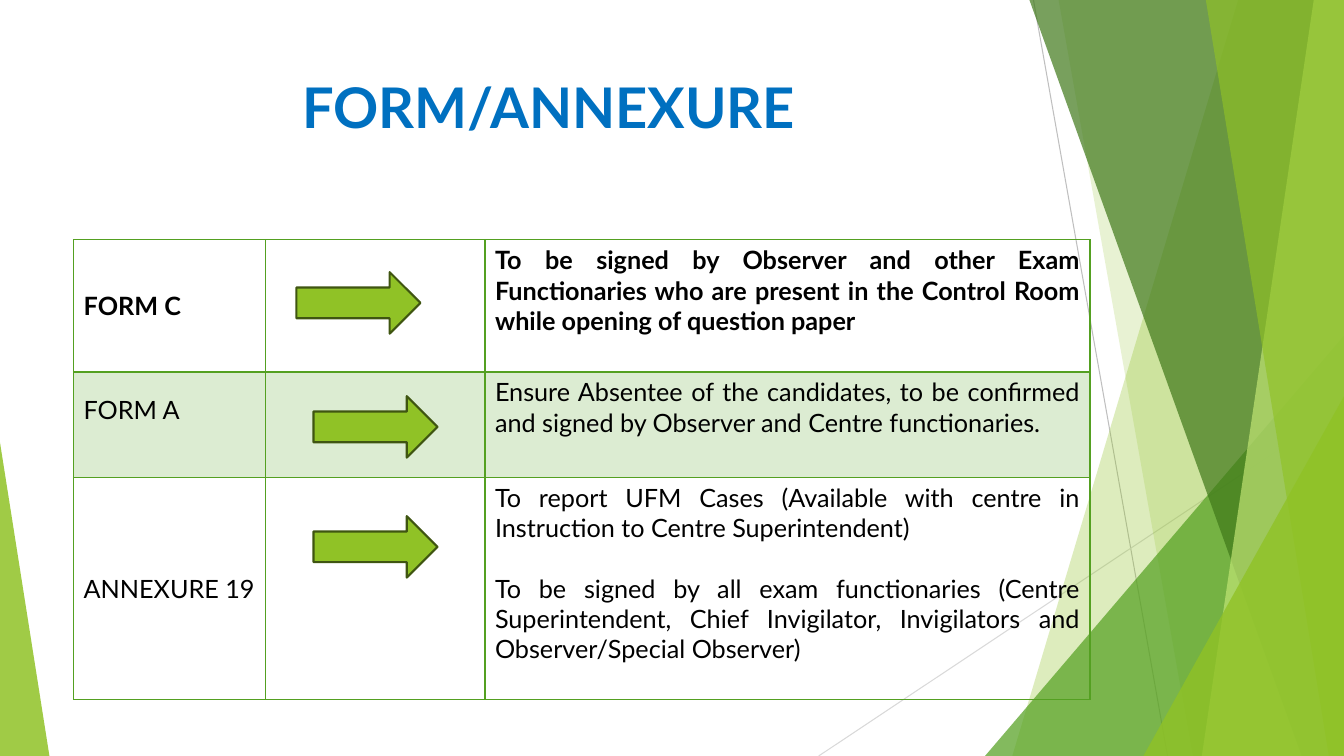
from lxml.etree import SubElement
from pptx import Presentation
from pptx.dml.color import RGBColor
from pptx.enum.shapes import MSO_CONNECTOR, MSO_SHAPE
from pptx.enum.text import MSO_ANCHOR, PP_ALIGN
from pptx.oxml.ns import qn
from pptx.util import Inches, Pt

WIDTH, HEIGHT = 13.33, 7.5
FONT = "Lato"

LIME = RGBColor(0x90, 0xC2, 0x26)
PALE_LIME = RGBColor(0xC0, 0xE4, 0x74)
GREEN = RGBColor(0x54, 0xA0, 0x21)
DARK_GREEN = RGBColor(0x3F, 0x78, 0x19)
ARROW_EDGE = RGBColor(0x3F, 0x55, 0x11)
BLUE = RGBColor(0x00, 0x70, 0xC0)
BLACK = RGBColor(0x00, 0x00, 0x00)
GREY = RGBColor(0xBF, 0xBF, 0xBF)
LIGHT_GREY = RGBColor(0xD9, 0xD9, 0xD9)

# Left end of the top edge, left end of the bottom edge, colour, opacity
BANDS_BEHIND = [(12.28, 10.04, LIME, 30), (10.5, 11.83, LIME, 20)]
BANDS_FRONT = [
    (10.21, 12.91, DARK_GREEN, 70),
    (13.03, 11.92, PALE_LIME, 70),
    (11.96, 13.18, LIME, 65),
]
HAIRLINES = [(10.25, 0, 11.58, HEIGHT, GREY), (WIDTH, 4.03, 8.12, HEIGHT, LIGHT_GREY)]

COLUMNS = [1.9, 2.18, 6]
ROWS = [1.31, 1.05, 2.2]
FORMS = [
    ("FORM C", ["To be signed by Observer and other Exam Functionaries who are "
                "present in the Control Room while opening of question paper"]),
    ("FORM A", ["Ensure Absentee of the candidates, to be confirmed and signed by "
                "Observer and Centre functionaries."]),
    ("ANNEXURE 19", ["To report UFM Cases (Available with centre in Instruction to "
                     "Centre Superintendent)",
                     "To be signed by all exam functionaries (Centre Superintendent, "
                     "Chief Invigilator, Invigilators and Observer/Special Observer)"]),
]
# Offset of each arrow from the corner of its cell
ARROW_OFFSETS = [(0.31, 0.32), (0.48, 0.24), (0.48, 0.38)]


def set_opacity(properties, percent):
    color = properties.find(qn("a:solidFill")).find(qn("a:srgbClr"))
    SubElement(color, qn("a:alpha"), val=str(percent * 1000))


def paint(shape, color, opacity):
    """Give a decorative shape a see-through fill without outline or shadow."""
    shape.shadow.inherit = False
    shape.fill.solid()
    shape.fill.fore_color.rgb = color
    set_opacity(shape.element.spPr, opacity)
    shape.line.fill.background()


def add_band(slide, top_x, bottom_x, color, opacity):
    """Add a slanted band that reaches the right edge of the slide."""
    corners = [(WIDTH, 0), (WIDTH, HEIGHT), (bottom_x, HEIGHT)]
    builder = slide.shapes.build_freeform(Inches(top_x), 0)
    builder.add_line_segments([(Inches(x), Inches(y)) for x, y in corners])
    paint(builder.convert_to_shape(), color, opacity)


def add_wedge(slide, left, width, height, apex, color, opacity):
    """Add a triangle that stands on the bottom edge of the slide."""
    wedge = slide.shapes.add_shape(
        MSO_SHAPE.ISOSCELES_TRIANGLE,
        Inches(left), Inches(HEIGHT - height), Inches(width), Inches(height))
    wedge.adjustments[0] = apex
    paint(wedge, color, opacity)


def add_backdrop(slide):
    for x1, y1, x2, y2, color in HAIRLINES:
        hairline = slide.shapes.add_connector(
            MSO_CONNECTOR.STRAIGHT, *map(Inches, (x1, y1, x2, y2)))
        hairline.line.color.rgb = color
        hairline.line.width = Pt(0.75)
        SubElement(hairline.element.spPr, qn("a:effectLst"))
    for band in BANDS_BEHIND:
        add_band(slide, *band)
    add_wedge(slide, WIDTH - 3.56, 3.56, 4.17, 1, GREEN, 72)
    for band in BANDS_FRONT:
        add_band(slide, *band)
    add_wedge(slide, WIDTH - 1.99, 1.99, 3.57, 1, LIME, 80)
    add_wedge(slide, 0, 0.49, 3.11, 0, LIME, 85)


def style_runs(paragraph, size, color, bold):
    for run in paragraph.runs:
        run.font.name = FONT
        run.font.size = Pt(size)
        run.font.bold = bold
        run.font.color.rgb = color


def add_title(slide, left, top, width, height):
    title = slide.shapes.title
    title.left, title.top, title.width, title.height = map(
        Inches, (left, top, width, height))
    frame = title.text_frame
    frame.text = "FORM/ANNEXURE"
    frame.vertical_anchor = MSO_ANCHOR.TOP
    frame.paragraphs[0].alignment = PP_ALIGN.CENTER
    style_runs(frame.paragraphs[0], 40, BLUE, True)


def set_borders(cell, top, bottom):
    properties = cell._tc.get_or_add_tcPr()
    for side, width in (("L", 1), ("R", 1), ("T", top), ("B", bottom)):
        edge = SubElement(properties, qn(f"a:ln{side}"), w=str(Pt(width)))
        fill = SubElement(edge, qn("a:solidFill"))
        SubElement(fill, qn("a:srgbClr"), val=str(GREEN))


def add_forms_table(slide, left, top):
    table = slide.shapes.add_table(
        len(ROWS), len(COLUMNS), Inches(left), Inches(top),
        Inches(sum(COLUMNS)), Inches(sum(ROWS))).table
    for column, width in zip(table.columns, COLUMNS):
        column.width = Inches(width)
    for index, (form, purpose) in enumerate(FORMS):
        table.rows[index].height = Inches(ROWS[index])
        name_cell, _, purpose_cell = cells = table.rows[index].cells
        for cell in cells:
            set_borders(cell, 2 if index == 1 else 1, 2 if index == 0 else 1)
            if index == 1:
                cell.fill.solid()
                cell.fill.fore_color.rgb = GREEN
                set_opacity(cell._tc.get_or_add_tcPr(), 20)
            else:
                cell.fill.background()
        name_cell.text_frame.text = form
        name_cell.vertical_anchor = MSO_ANCHOR.MIDDLE
        if index == 1:
            name_cell.margin_bottom = Inches(0.35)
        purpose_cell.text_frame.text = "\n".join(purpose)
        for paragraph in purpose_cell.text_frame.paragraphs:
            paragraph.alignment = PP_ALIGN.JUSTIFY
        for paragraph in purpose_cell.text_frame.paragraphs[1:]:
            paragraph.space_before = Pt(21.6)
        for cell in (name_cell, purpose_cell):
            for paragraph in cell.text_frame.paragraphs:
                style_runs(paragraph, 18, BLACK, index == 0)


def add_arrows(slide, left, top):
    """Add one arrow in the middle column of each row of the table."""
    for index, (dx, dy) in enumerate(ARROW_OFFSETS):
        arrow = slide.shapes.add_shape(
            MSO_SHAPE.RIGHT_ARROW,
            Inches(left + COLUMNS[0] + dx), Inches(top + sum(ROWS[:index]) + dy),
            Inches(1.23), Inches(0.61))
        arrow.shadow.inherit = False
        arrow.fill.solid()
        arrow.fill.fore_color.rgb = LIME
        arrow.line.color.rgb = ARROW_EDGE
        arrow.line.width = Pt(1.5)


def main():
    deck = Presentation()
    deck.slide_width, deck.slide_height = Inches(WIDTH), Inches(HEIGHT)
    slide = deck.slides.add_slide(deck.slide_layouts[5])
    add_backdrop(slide)
    add_title(slide, 0.74, 0.67, 9.4, 1.44)
    add_forms_table(slide, 0.73, 2.38)
    add_arrows(slide, 0.73, 2.38)
    deck.save("out.pptx")


if __name__ == "__main__":
    main()
